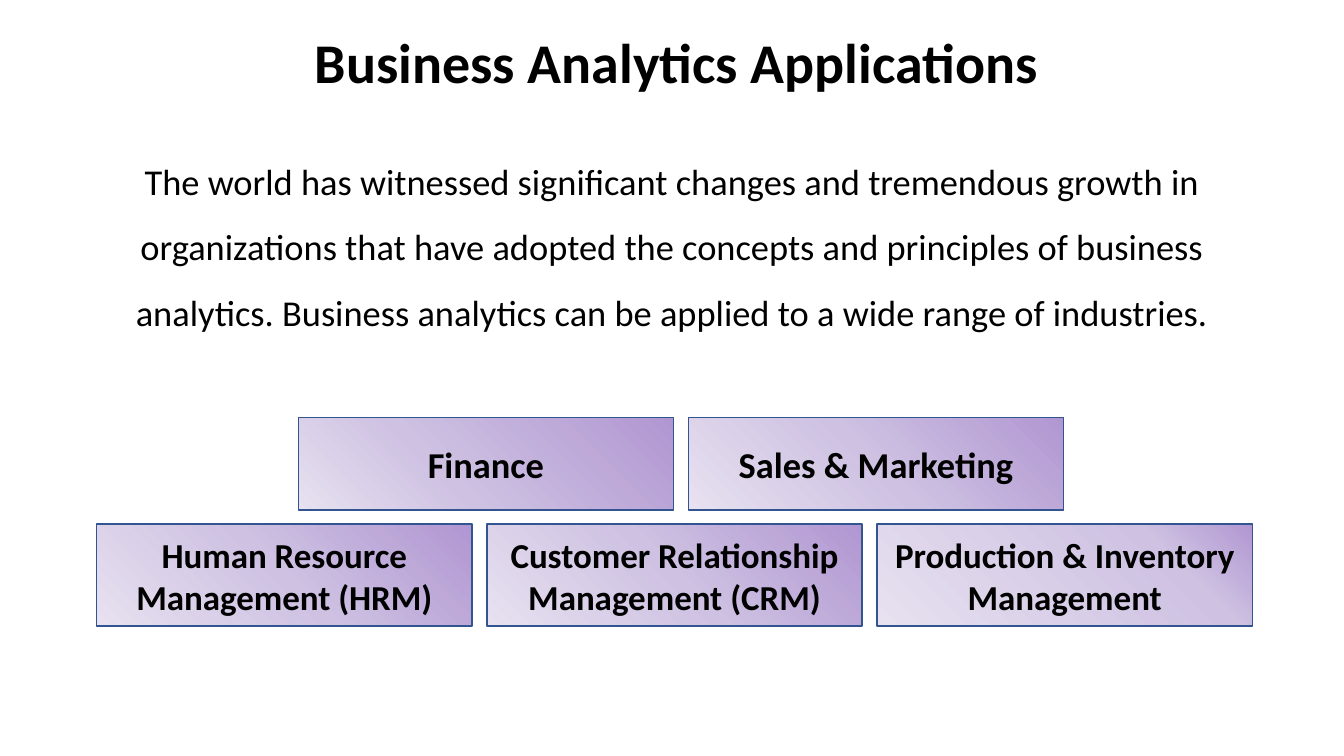
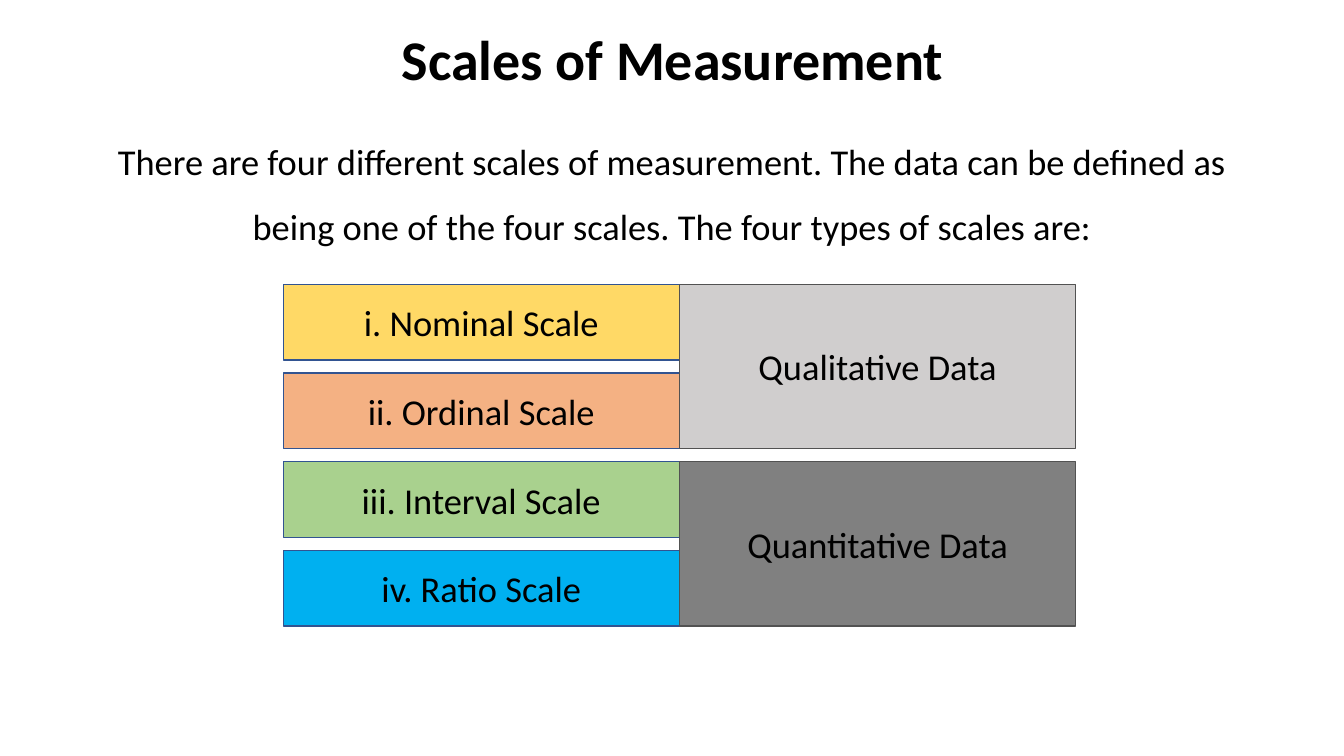
from copy import deepcopy

from pptx import Presentation
from pptx.dml.color import RGBColor
from pptx.enum.shapes import MSO_SHAPE
from pptx.enum.text import MSO_ANCHOR, MSO_AUTO_SIZE, PP_ALIGN
from pptx.oxml.ns import qn
from pptx.util import Pt

RECTANGLE = MSO_SHAPE.RECTANGLE
MIDDLE = MSO_ANCHOR.MIDDLE
CENTER = PP_ALIGN.CENTER
GROW = MSO_AUTO_SIZE.SHAPE_TO_FIT_TEXT

EMU_PER_PX = 9144
SLIDE_WIDTH, SLIDE_HEIGHT = 1333, 750
BLANK_LAYOUT = 6

FONT = "Calibri"
BLACK = "000000"
BLUE_LINE = "325491"
GRAY_LINE = "525252"
PURPLES = ("B197D2", "CEC1E2", "E7E1F0")
GRADIENT_ANGLE = 225

TEXT_LEFT, TEXT_WIDTH = 92, 1150
TITLE_HEIGHT = 77
BOX_WIDTH, BOX_GAP = 372, 15
SCALE_LEFT, SCALE_TOP = 281, 282
SCALE_WIDTH, SCALE_HEIGHT, SCALE_GAP = 393, 75, 13
DATA_HEIGHT = 2 * SCALE_HEIGHT + SCALE_GAP

FINANCE_ROW = (("Finance", 61), ("Sales & Marketing", 50))
MANAGEMENT_ROW = (
    ("Human Resource Management (HRM)", 50),
    ("Customer Relationship Management (CRM)", 50),
    ("Production & Inventory Management", 24),
)
SCALES = (
    ("i. Nominal Scale", "FFD966"),
    ("ii. Ordinal Scale", "F4B183"),
    ("iii. Interval Scale", "A9D18E"),
    ("iv. Ratio Scale", "00B0F0"),
)
DATA_KINDS = (("Qualitative Data", "D0CECE"), ("Quantitative Data", "808080"))


def px(*lengths):
    """Turn pixel lengths into a list of EMU lengths."""
    return [length * EMU_PER_PX for length in lengths]


def color(hex_string):
    """Return the colour for a hex string."""
    return RGBColor.from_string(hex_string)


def write_text(shape, text, size=26, bold=False, line_spacing=None, space_after=None):
    """Write one centred, wrapped paragraph into a shape."""
    shape.text_frame.word_wrap = True
    paragraph = shape.text_frame.paragraphs[0]
    paragraph.alignment = CENTER
    paragraph.line_spacing = line_spacing
    if space_after is not None:
        paragraph.space_after = Pt(space_after)
    run = paragraph.add_run()
    run.text = text
    run.font.name = FONT
    run.font.size = Pt(size)
    run.font.bold = bold
    run.font.color.rgb = color(BLACK)


def add_text(slide, text, left, top, height, **text_format):
    """Add a text box that spans the text column."""
    box = slide.shapes.add_textbox(*px(left, top, TEXT_WIDTH, height))
    write_text(box, text, **text_format)
    box.text_frame.auto_size = GROW


def add_title(slide, text, left, top):
    """Add a slide title."""
    add_text(slide, text, left, top, TITLE_HEIGHT, size=40, bold=True)


def add_box(slide, text, bounds, line, **text_format):
    """Add an outlined rectangle with centred text and return it."""
    box = slide.shapes.add_shape(RECTANGLE, *px(*bounds))
    box.shadow.inherit = False
    box.line.color.rgb = color(line)
    box.line.width = Pt(1)
    box.text_frame.vertical_anchor = MIDDLE
    write_text(box, text, **text_format)
    return box


def fill_gradient(shape, middle):
    """Fill a shape with the purple gradient, its middle stop at a percentage."""
    shape.fill.gradient()
    shape.fill.gradient_angle = GRADIENT_ANGLE
    stop_list = shape.element.spPr.find(qn("a:gradFill")).find(qn("a:gsLst"))
    stop_list.append(deepcopy(stop_list[0]))
    positions = (0, middle / 100, 1)
    for stop, position, purple in zip(shape.fill.gradient_stops, positions, PURPLES):
        stop.position = position
        stop.color.rgb = color(purple)


def add_application_row(slide, applications, left, top, height, size):
    """Add a row of equally spaced gradient boxes."""
    for index, (text, middle) in enumerate(applications):
        bounds = (left + index * (BOX_WIDTH + BOX_GAP), top, BOX_WIDTH, height)
        box = add_box(slide, text, bounds, BLUE_LINE, size=size, bold=True)
        fill_gradient(box, middle)


def add_column(slide, entries, left, height, line):
    """Add a column of equally spaced plain boxes."""
    for index, (text, fill) in enumerate(entries):
        top = SCALE_TOP + index * (height + SCALE_GAP)
        box = add_box(slide, text, (left, top, SCALE_WIDTH, height), line)
        box.fill.solid()
        box.fill.fore_color.rgb = color(fill)


def build_applications(slide):
    """Build the slide on applications of business analytics."""
    add_title(slide, "Business Analytics Applications", 96, 22)
    add_text(
        slide,
        "The world has witnessed significant changes and tremendous growth in "
        "organizations that have adopted the concepts and principles of business "
        "analytics. Business analytics can be applied to a wide range of industries.",
        TEXT_LEFT, 131, 200, line_spacing=1.5,
    )
    add_application_row(slide, FINANCE_ROW, 296, 414, 92, 26)
    add_application_row(slide, MANAGEMENT_ROW, 96, 520, 101, 25)


def build_scales(slide):
    """Build the slide on scales of measurement."""
    add_title(slide, "Scales of Measurement", TEXT_LEFT, 19)
    add_text(
        slide,
        "There are four different scales of measurement. The data can be defined as "
        "being one of the four scales. The four types of scales are:",
        TEXT_LEFT, 111, 134, line_spacing=1.5, space_after=12,
    )
    add_column(slide, SCALES, SCALE_LEFT, SCALE_HEIGHT, BLUE_LINE)
    add_column(slide, DATA_KINDS, SCALE_LEFT + SCALE_WIDTH, DATA_HEIGHT, GRAY_LINE)


def main():
    """Build and save the presentation."""
    presentation = Presentation()
    presentation.slide_width, presentation.slide_height = px(SLIDE_WIDTH, SLIDE_HEIGHT)
    for build in (build_applications, build_scales):
        build(presentation.slides.add_slide(presentation.slide_layouts[BLANK_LAYOUT]))
    presentation.save("out.pptx")


if __name__ == "__main__":
    main()
